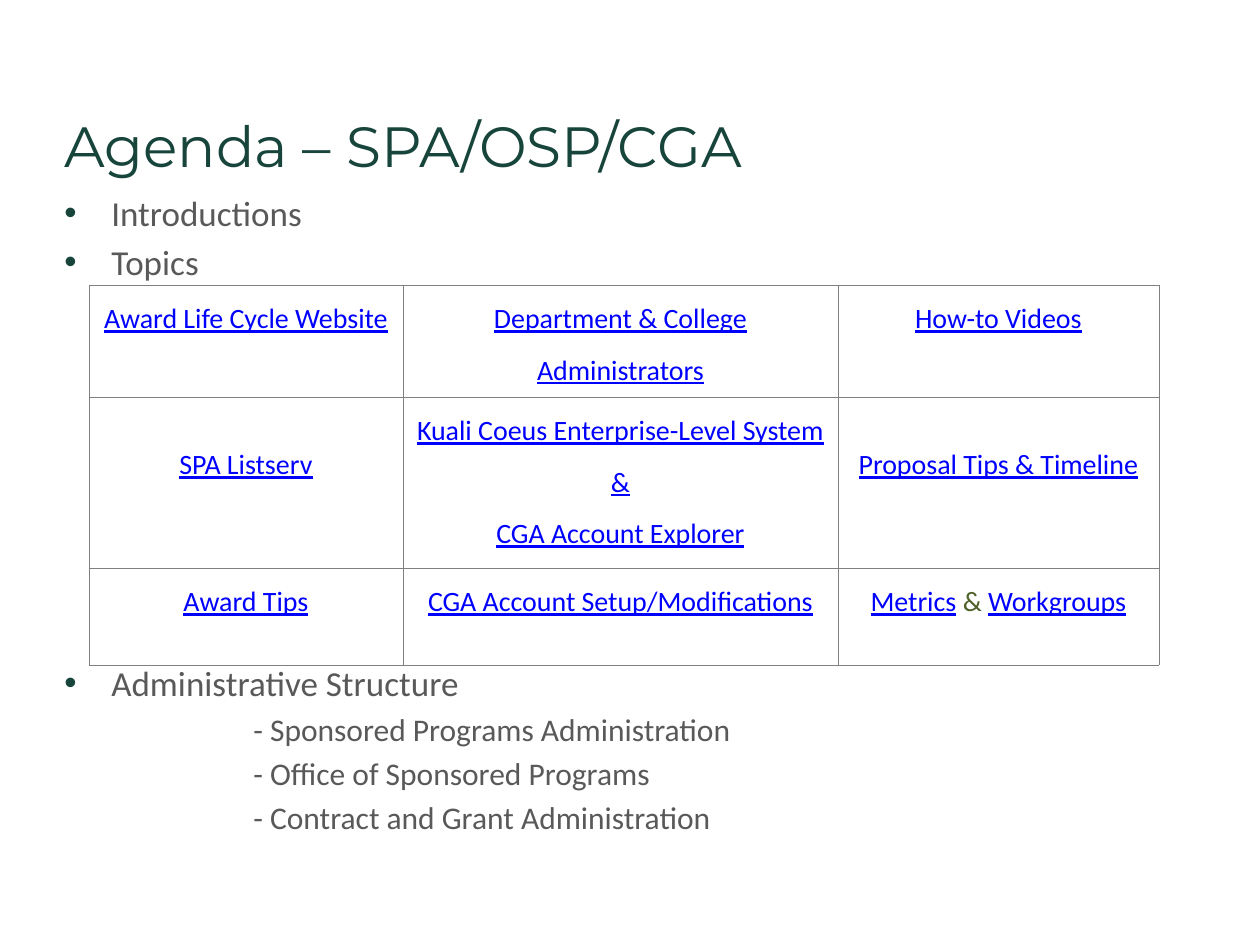
from dataclasses import dataclass

from lxml import etree
from pptx import Presentation
from pptx.dml.color import RGBColor
from pptx.enum.text import MSO_ANCHOR, PP_ALIGN
from pptx.oxml.ns import qn
from pptx.util import Pt

CENTER = PP_ALIGN.CENTER
TOP = MSO_ANCHOR.TOP
EMU_PER_INCH = 914400
PX_PER_INCH = 126


@dataclass(frozen=True)
class Theme:
    heading_font: str = "Montserrat"
    body_font: str = "Calibri"
    green: str = "18453B"
    gray: str = "595959"
    link: str = "0000FF"
    olive: str = "4F6228"
    border: str = "808080"
    title_size: float = 32.4
    topic_size: int = 20
    office_size: int = 18
    cell_size: int = 16
    border_width: float = 0.5


def px(length):
    return round(length * EMU_PER_INCH / PX_PER_INCH)


def add_span(para, text, *, font, size, color, underline=False):
    span = para.add_run()
    span.text = text
    span.font.name = font
    span.font.size = Pt(size)
    span.font.color.rgb = RGBColor.from_string(color)
    span.font.underline = underline


def next_para(frame, index):
    return frame.add_paragraph() if index else frame.paragraphs[0]


class SlideBuilder:
    def __init__(self, page, theme):
        self.page = page
        self.theme = theme

    def text_box(self, left, top, width, height):
        box = self.page.shapes.add_textbox(px(left), px(top), px(width), px(height))
        frame = box.text_frame
        frame.word_wrap = True
        frame.vertical_anchor = TOP
        return frame

    def title(self, text, left, top, width, height):
        frame = self.text_box(left, top, width, height)
        theme = self.theme
        add_span(frame.paragraphs[0], text, font=theme.heading_font,
                 size=theme.title_size, color=theme.green)

    def outline(self, topics, offices, left, top, width, height):
        frame = self.text_box(left, top, width, height)
        theme = self.theme
        entries = [(text, True) for text in topics] + [(text, False) for text in offices]
        for index, (text, is_topic) in enumerate(entries):
            para = next_para(frame, index)
            size = theme.topic_size if is_topic else theme.office_size
            if is_topic:
                self.bullet(para, 47)
            else:
                para._p.get_or_add_pPr().set("marL", str(px(189)))
            if index:
                para.space_before = Pt(size * 0.2)
            add_span(para, text, font=theme.body_font, size=size, color=theme.gray)

    def bullet(self, para, indent):
        properties = para._p.get_or_add_pPr()
        properties.set("marL", str(px(indent)))
        properties.set("indent", str(-px(indent)))
        color = etree.SubElement(properties, qn("a:buClr"))
        etree.SubElement(color, qn("a:srgbClr"), val=self.theme.green)
        etree.SubElement(properties, qn("a:buFont"), typeface="Arial")
        etree.SubElement(properties, qn("a:buChar"), char="•")

    def table(self, rows, left, top, widths, heights, lowered):
        frame = self.page.shapes.add_table(
            len(heights), len(widths), px(left), px(top), px(sum(widths)), px(sum(heights)))
        table = frame.table
        table.first_row = False
        table.horz_banding = False
        for column, width in zip(table.columns, widths):
            column.width = px(width)
        for row, height in zip(table.rows, heights):
            row.height = px(height)
        for row, texts in zip(table.rows, rows):
            for cell, lines in zip(row.cells, texts):
                self.cell(cell, lines, 34 if lines in lowered else 0)

    def cell(self, cell, lines, margin_top):
        theme = self.theme
        cell.margin_left = cell.margin_right = px(9)
        cell.margin_top = px(margin_top)
        cell.margin_bottom = 0
        self.borders(cell)
        cell.fill.background()
        for index, line in enumerate(lines):
            para = next_para(cell.text_frame, index)
            para.alignment = CENTER
            para.line_spacing = 1.5
            for text in line:
                linked = text != JOINER
                add_span(para, text, font=theme.body_font, size=theme.cell_size,
                         color=theme.link if linked else theme.olive, underline=linked)

    def borders(self, cell):
        properties = cell._tc.get_or_add_tcPr()
        for side in ("lnL", "lnR", "lnT", "lnB"):
            line = etree.SubElement(properties, qn(f"a:{side}"),
                                    w=str(Pt(self.theme.border_width)))
            fill = etree.SubElement(line, qn("a:solidFill"))
            etree.SubElement(fill, qn("a:srgbClr"), val=self.theme.border)


JOINER = " & "
LISTSERV = [["SPA Listserv"]]
TIMELINE = [["Proposal Tips & Timeline"]]
RESOURCES = [
    [[["Award Life Cycle Website"]],
     [["Department & College Administrators"]],
     [["How-to Videos"]]],
    [LISTSERV,
     [["Kuali Coeus Enterprise-Level System"], ["&"], ["CGA Account Explorer"]],
     TIMELINE],
    [[["Award Tips"]],
     [["CGA Account Setup/Modifications"]],
     [["Metrics", JOINER, "Workgroups"]]],
]
OFFICES = [
    "- Sponsored Programs Administration",
    "- Office of Sponsored Programs",
    "- Contract and Grant Administration",
]


def main():
    deck = Presentation()
    deck.slide_width = px(1260)
    deck.slide_height = px(945)
    page = deck.slides.add_slide(deck.slide_layouts[6])
    builder = SlideBuilder(page, Theme())
    builder.title("Agenda – SPA/OSP/CGA", 52, 105, 1134, 67)
    builder.outline(["Introductions", "Topics"], [], 52, 185, 1145, 100)
    builder.outline(["Administrative Structure"], OFFICES, 52, 655, 1145, 222)
    builder.table(RESOURCES, 89, 285, [314, 435, 321], [112, 171, 97],
                  lowered=[LISTSERV, TIMELINE])
    deck.save("out.pptx")


if __name__ == "__main__":
    main()
